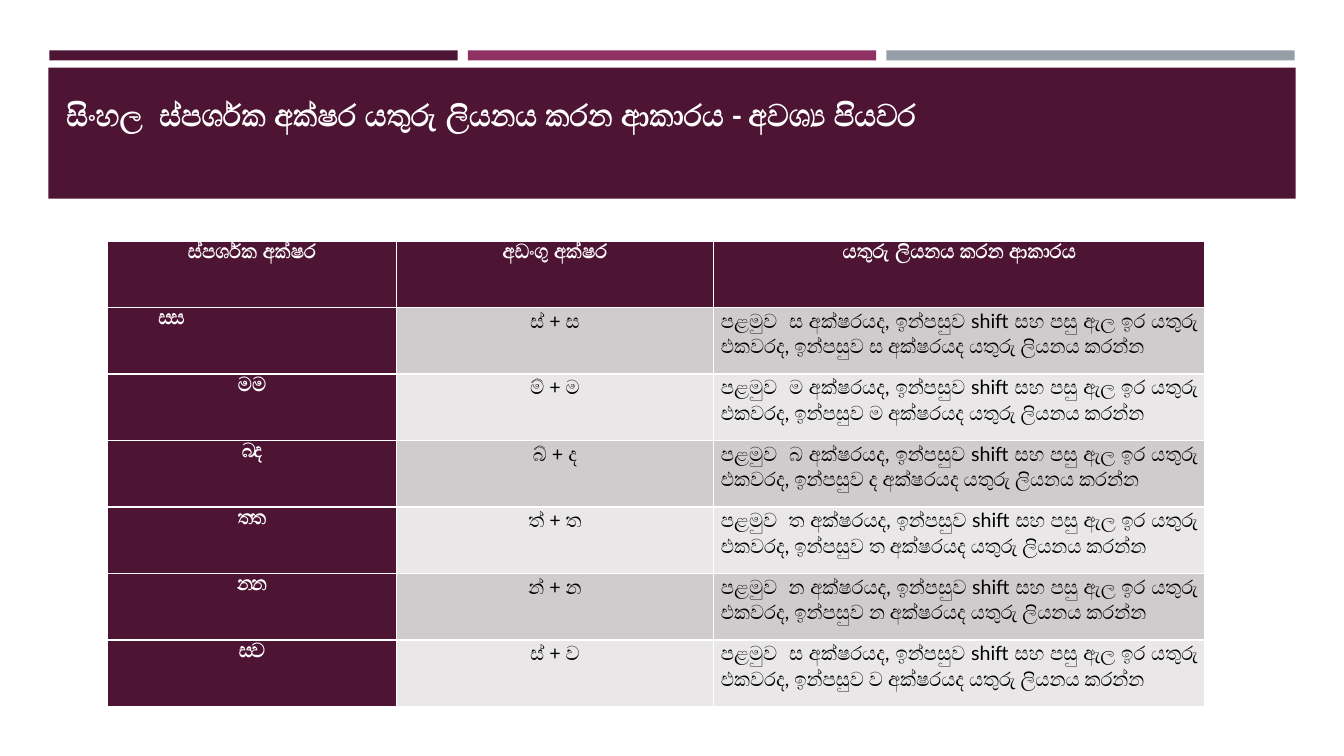
"""Builds the slide on typing joined Sinhala letters: heading band and key table."""
from pptx import Presentation
from pptx.dml.color import RGBColor
from pptx.enum.shapes import MSO_SHAPE
from pptx.enum.text import MSO_ANCHOR, PP_ALIGN
from pptx.util import Inches, Pt

COLORS = {
    "plum": "4D1434", "magenta": "903163", "grey": "969FA7",
    "white": "FFFFFF", "black": "000000",
    "dark_row": "D0CCCE", "light_row": "E9E7E8",
}
JOINER = chr(0x200D)
HEADING = f"සිංහල  ස්පර්ශක අක්ෂර යතුරු ලියනය කරන ආකාරය - අවශ්{JOINER}ය පියවර"
HEADERS = ["ස්පර්ශක අක්ෂර", "අඩංගු අක්ෂර", "යතුරු ලියනය කරන ආකාරය"]
LETTER_PAIRS = ["සස", "මම", "බද", "තත", "නන", "සව"]
COLUMN_WIDTHS = [2.86, 3.15, 4.87]
ROW_HEIGHT = 0.66


def rgb(color):
    return RGBColor.from_string(COLORS[color])


def write(paragraph, text, color, **formats):
    run = paragraph.add_run()
    run.text = text
    run.font.color.rgb = rgb(color)
    for attribute, value in formats.items():
        setattr(run.font, attribute, value)


deck = Presentation()
deck.slide_width, deck.slide_height = Inches(13.33), Inches(7.5)
slide = deck.slides.add_slide(deck.slide_layouts[6])

bands = [(0.49 + 4.15 * i, 0.5, 4.05, 0.1, color)
         for i, color in enumerate(["plum", "magenta", "grey"])]
bands.append((0.48, 0.67, 12.37, 1.3, "plum"))
for left, top, width, height, color in bands:
    band = slide.shapes.add_shape(MSO_SHAPE.RECTANGLE, Inches(left), Inches(top),
                                  Inches(width), Inches(height))
    band.shadow.inherit = False
    band.fill.solid()
    band.fill.fore_color.rgb = rgb(color)
    band.line.fill.background()

heading = slide.shapes.add_textbox(Inches(0.56), Inches(0.89), Inches(12.06), Inches(0.5))
heading_format = {"word_wrap": True, "vertical_anchor": MSO_ANCHOR.MIDDLE}
for attribute, value in heading_format.items():
    setattr(heading.text_frame, attribute, value)
write(heading.text_frame.paragraphs[0], HEADING, "white",
      name="Calibri", size=Pt(21.6), bold=True)

rows = [HEADERS]
for first, second in LETTER_PAIRS:
    joined = "මම" if first == "ම" else f"{first}{JOINER}්{second}"
    steps = (f"පළමුව  {first} අක්ෂරයද, ඉන්පසුව shift සහ පසු ඇල ඉර යතුරු එකවරද, "
             f"ඉන්පසුව {second} අක්ෂරයද යතුරු ලියනය කරන්න")
    rows.append([joined, f"{first}් + {second}", steps])

key_table = slide.shapes.add_table(
    len(rows), len(HEADERS), Inches(1.07), Inches(2.39),
    Inches(sum(COLUMN_WIDTHS)), Inches(ROW_HEIGHT * len(rows))).table
key_table.first_col = True
for column, width in zip(key_table.columns, COLUMN_WIDTHS):
    column.width = Inches(width)

cell_format = {"margin_left": Inches(0.07), "margin_right": Inches(0.07),
               "margin_top": 0, "margin_bottom": 0, "vertical_anchor": MSO_ANCHOR.TOP}
for r, texts in enumerate(rows):
    key_table.rows[r].height = Inches(ROW_HEIGHT)
    for c, text in enumerate(texts):
        cell = key_table.cell(r, c)
        for attribute, value in cell_format.items():
            setattr(cell, attribute, value)
        is_label = r == 0 or c == 0
        cell.fill.solid()
        cell.fill.fore_color.rgb = rgb(
            "plum" if is_label else "dark_row" if r % 2 else "light_row")
        paragraph = cell.text_frame.paragraphs[0]
        paragraph.line_spacing = 1.07
        paragraph.alignment = PP_ALIGN.JUSTIFY if r and c == 2 else PP_ALIGN.CENTER
        write(paragraph, text, "white" if is_label else "black",
              name="Lato", size=Pt(14), bold=is_label)

first_joined = key_table.cell(1, 0)
first_joined.margin_left = Inches(0.5)
first_joined.text_frame.paragraphs[0].alignment = PP_ALIGN.LEFT

deck.save("out.pptx")
